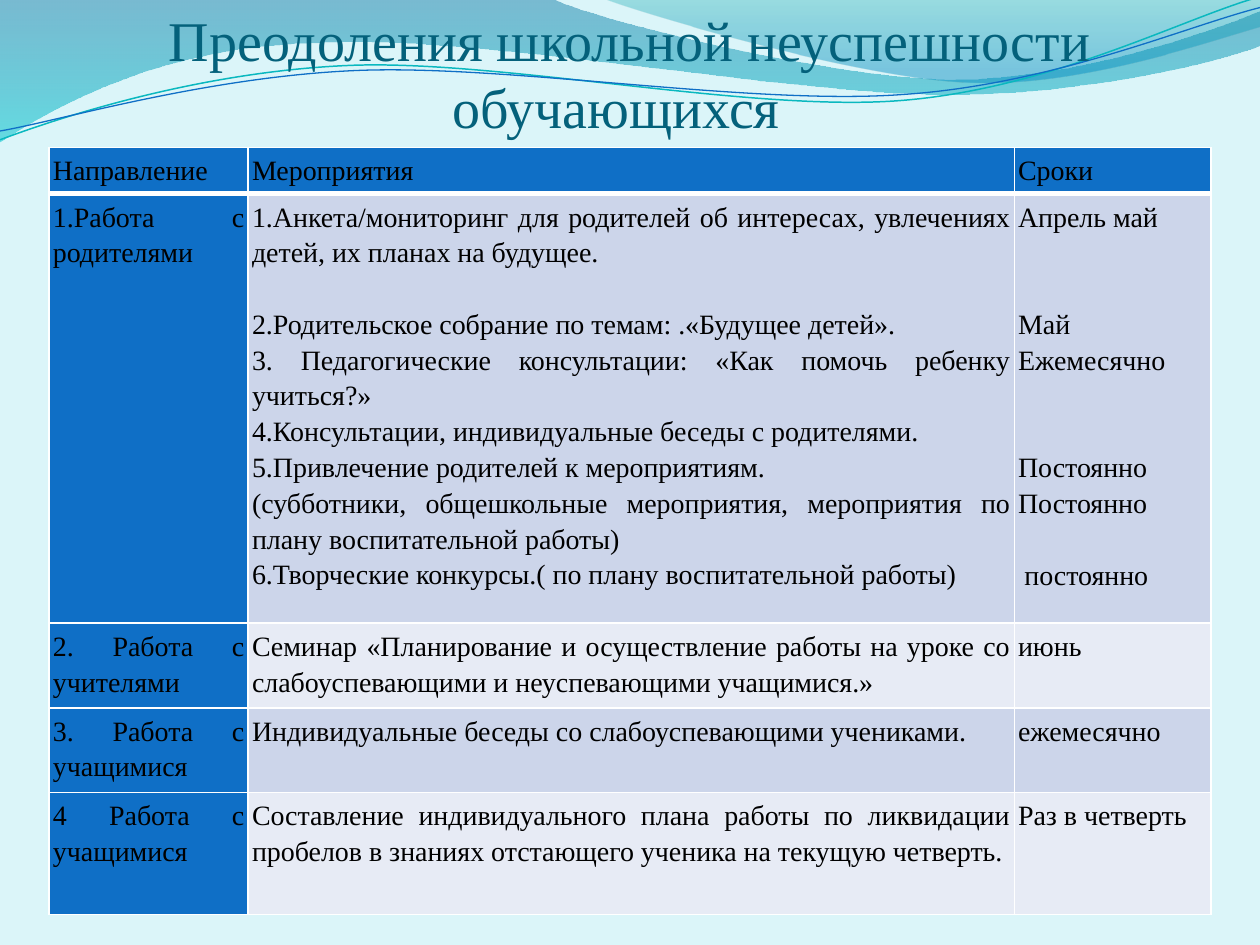
from lxml import etree
from pptx import Presentation
from pptx import util as u
from pptx.dml.color import RGBColor
from pptx.enum import text
from pptx.oxml.ns import qn

FONT = "Times New Roman"
BLUE, WHITE, BLACK = "0F6FC6", "FFFFFF", "000000"
BANDS = ["CCD5EA", "E7EBF5"]
LINE_GAP = 20.5

COLUMNS = [1.58, 6.08, 1.56]
ROWS = [0.36, 3.24, 0.63, 0.66, 0.97]
PLAN = [
    ["Направление", "Мероприятия", "Сроки"],
    [
        "1.Работа с родителями",
        [
            ("1.Анкета/мониторинг для родителей об интересах, увлечениях детей, их планах на будущее.", 0),
            ("2.Родительское собрание по темам: .«Будущее детей».", 1),
            ("3. Педагогические консультации: «Как помочь ребенку учиться?»", 0),
            ("4.Консультации, индивидуальные беседы с родителями.", 0),
            ("5.Привлечение родителей к мероприятиям.", 0),
            ("(субботники, общешкольные мероприятия, мероприятия по плану воспитательной работы)", 0),
            ("6.Творческие конкурсы.( по плану воспитательной работы)", 0),
        ],
        [
            ("Апрель май", 0),
            ("Май", 2),
            ("Ежемесячно", 0),
            ("Постоянно", 2),
            ("Постоянно", 0),
            ("постоянно", 1, 0.05),
        ],
    ],
    [
        "2. Работа с учителями",
        "Семинар «Планирование и осуществление работы на уроке со слабоуспевающими и неуспевающими учащимися.»",
        "июнь",
    ],
    ["3. Работа с учащимися", "Индивидуальные беседы со слабоуспевающими учениками.", "ежемесячно"],
    [
        "4 Работа с учащимися",
        "Составление индивидуального плана работы по ликвидации пробелов в знаниях отстающего ученика на текущую четверть.",
        "Раз в четверть",
    ],
]

WIDE_BAND = [
    [(0, 0)],
    [(4.4, 0)],
    [(4.76, 0.17), (6.64, 0.63), (7.58, 0.63)],
    [(8.53, 0.63), (9.58, 0.26), (10, 0.09)],
    [(10.01, 0.36)],
    [(9.83, 0.44), (8.7, 0.76), (7.46, 0.75)],
    [(6.22, 0.75), (3.82, 0.28), (2.57, 0.34)],
    [(1.29, 0.36), (0.46, 0.83), (-0.01, 1.13)],
]
RIGHT_BAND = [
    [(4.79, -0.01)],
    [(5.09, 0.11), (6.82, 0.62), (7.69, 0.65)],
    [(8.56, 0.69), (9.61, 0.32), (10, 0.21)],
    [(10, 0)],
]
TEAL_LINE = [
    [(0, 1.11)],
    [(0.48, 0.93), (1.58, 0.57), (2.77, 0.52)],
    [(3.95, 0.47), (5.93, 0.89), (7.13, 0.8)],
    [(8.33, 0.71), (9.38, 0.15), (9.98, -0.02)],
]
BLUE_LINE = [
    [(0, 1.04)],
    [(0.47, 0.96), (1.64, 0.61), (2.83, 0.56)],
    [(4.03, 0.51), (5.97, 0.84), (7.17, 0.75)],
    [(8.36, 0.67), (9.41, 0.21), (10, 0.06)],
]


def color(value):
    """Turn a hex string into a colour."""
    return RGBColor.from_string(value)


def add_wave(page, left, top, segments, closed):
    """Draw an outline whose three-point segments are curves."""
    points = [(u.Inches(left + x), u.Inches(top + y)) for segment in segments for x, y in segment]
    builder = page.shapes.build_freeform(*points[0])
    builder.add_line_segments(points[1:], close=closed)
    wave = builder.convert_to_shape()
    wave.shadow.inherit = False
    lines = iter(list(wave._element.iter(qn("a:lnTo"))))
    for segment in segments[1:]:
        parts = [next(lines) for _ in segment]
        if len(parts) == 3:
            curve = etree.Element(qn("a:cubicBezTo"))
            parts[0].addprevious(curve)
            for part in parts:
                curve.append(part[0])
                part.getparent().remove(part)
    return wave


def add_band(page, left, top, segments, stops):
    """Add a translucent band shaded from top to bottom."""
    band = add_wave(page, left, top, segments, True)
    band.line.fill.background()
    band.fill.gradient()
    band.fill.gradient_angle = 270
    for stop, (position, value, _) in zip(band.fill.gradient_stops, stops):
        stop.position = position
        stop.color.rgb = color(value)
    for tint, (_, _, opacity) in zip(band._element.spPr.iter(qn("a:srgbClr")), stops):
        etree.SubElement(tint, qn("a:alpha"), val=str(opacity * 1000))


def add_waves(page, left, top):
    """Add the bands and thin lines along the top edge."""
    add_band(page, left, top, WIDE_BAND, [(0, "0074A1", 45), (1, "00C6CF", 55)])
    add_band(page, left, top, RIGHT_BAND, [(0, "00A1A9", 30), (0.8, "008BBF", 45)])
    for segments, value, width in [(TEAL_LINE, "0AB8BF", 0.85), (BLUE_LINE, BLUE, 0.75)]:
        line = add_wave(page, left, top, segments, False)
        line.fill.background()
        line.line.color.rgb = color(value)
        line.line.width = u.Pt(width)


def set_font(para, size, value):
    """Set the font of a paragraph and of its end mark."""
    para.font.name, para.font.size, para.font.bold = FONT, u.Pt(size), False
    para.font.color.rgb = color(value)
    end = etree.SubElement(para._p, qn("a:endParaRPr"), sz=str(size * 100))
    etree.SubElement(end, qn("a:latin"), typeface=FONT)


def add_title(page, left, top, width, height):
    """Add the centred heading, its first line set in a little."""
    box = page.shapes.add_textbox(*map(u.Inches, (left, top, width, height)))
    frame = box.text_frame
    frame.word_wrap = True
    frame.vertical_anchor = text.MSO_ANCHOR.BOTTOM
    frame.margin_left = frame.margin_right = frame.margin_top = frame.margin_bottom = 0
    para = frame.paragraphs[0]
    para.text = "Преодоления школьной неуспешности обучающихся"
    para.alignment = text.PP_ALIGN.CENTER
    para._p.get_or_add_pPr().set("indent", str(u.Inches(9 - width)))
    set_font(para, 32, "04617B")


def set_borders(cell, top, bottom):
    """Give a cell white borders of the given widths in points."""
    properties = cell._tc.get_or_add_tcPr()
    for side, width in [("L", 1), ("R", 1), ("T", top), ("B", bottom)]:
        line = etree.SubElement(properties, qn("a:ln" + side), w=str(u.Pt(width)))
        fill = etree.SubElement(line, qn("a:solidFill"))
        etree.SubElement(fill, qn("a:srgbClr"), val=WHITE)


def fill_cell(cell, content):
    """Write one or more justified paragraphs into a cell."""
    cell.margin_left = cell.margin_right = cell.margin_top = cell.margin_bottom = u.Inches(0.03)
    single = isinstance(content, str)
    frame = cell.text_frame
    for index, (words, gap, *indent) in enumerate([(content, 0)] if single else content):
        para = frame.add_paragraph() if index else frame.paragraphs[0]
        para.text = words
        para.alignment = text.PP_ALIGN.JUSTIFY
        para.line_spacing = 1.15
        if gap:
            para.space_before = u.Pt(gap * LINE_GAP)
        if single:
            para.space_after = u.Pt(10)
        if indent:
            para._p.get_or_add_pPr().set("marL", str(u.Inches(indent[0])))
        set_font(para, 16, BLACK)


def add_plan(page, left, top):
    """Add the table of directions, activities and dates."""
    size = (left, top, sum(COLUMNS), sum(ROWS))
    table = page.shapes.add_table(len(ROWS), len(COLUMNS), *map(u.Inches, size)).table
    table.horz_banding = False
    for column, width in zip(table.columns, COLUMNS):
        column.width = u.Inches(width)
    for number, (row, height) in enumerate(zip(table.rows, ROWS)):
        row.height = u.Inches(height)
        for place, (cell, content) in enumerate(zip(row.cells, PLAN[number])):
            fill_cell(cell, content)
            set_borders(cell, 3 if number == 1 else 1, 3 if number == 0 else 1)
            cell.fill.solid()
            heading = number == 0 or place == 0
            cell.fill.fore_color.rgb = color(BLUE if heading else BANDS[(number - 1) % 2])


def main():
    """Build and save the deck."""
    deck = Presentation()
    deck.slide_width, deck.slide_height = u.Inches(10), u.Inches(7.5)
    page = deck.slides.add_slide(deck.slide_layouts[6])
    page.background.fill.solid()
    page.background.fill.fore_color.rgb = color("DBF5F9")
    add_waves(page, 0, 0)
    add_title(page, 0.5, 0.09, 8.78, 1.02)
    add_plan(page, 0.39, 1.17)
    deck.save("out.pptx")


if __name__ == "__main__":
    main()
